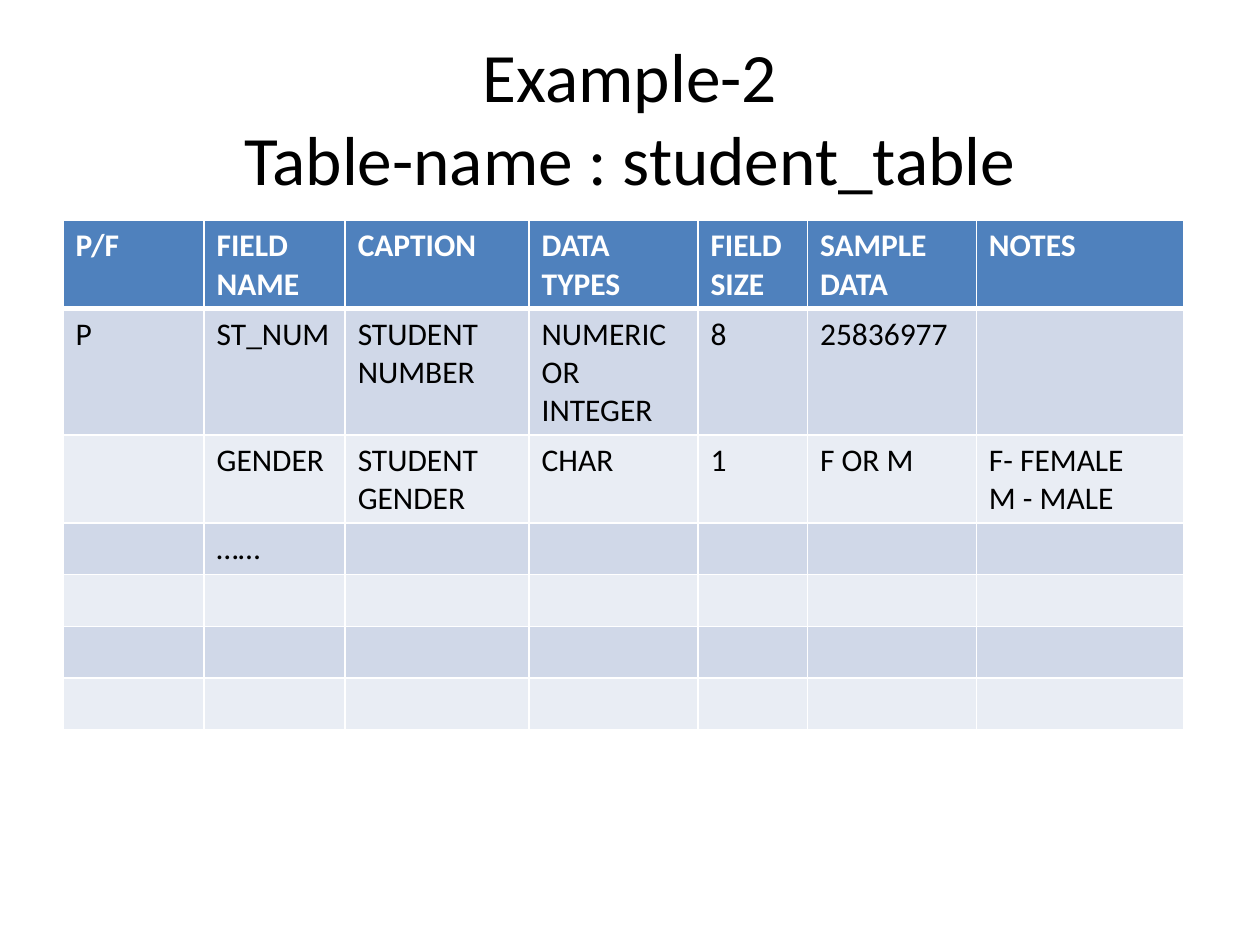
import pptx
import pptx.util
import pptx.dml.color
import pptx.enum.text
import pptx.oxml
import pptx.oxml.ns

WIDE, HIGH = 10, 7.5
HEAD = ["P/F", "FIELD NAME", "CAPTION", "DATA TYPES", "FIELD SIZE",
        "SAMPLE DATA", "NOTES"]
ROWS = [
    ["P", "ST_NUM", "STUDENT NUMBER", "NUMERIC OR INTEGER", "8", "25836977", ""],
    ["", "GENDER", "STUDENT GENDER", "CHAR", "1", "F OR M",
     "F- FEMALE\nM - MALE"],
    ["", "……", "", "", "", "", ""],
] + [[""] * len(HEAD)] * 3
COLS = [1.12, 1.12, 1.46, 1.34, 0.87, 1.34, 1.65]


def color(code):
    return pptx.dml.color.RGBColor.from_string(code)


class Deck:
    font = "Calibri"
    ink, paper = "000000", "FFFFFF"
    blue, bands = "4F81BD", ["D0D8E8", "E9EDF4"]
    row = 0.41

    def __init__(self):
        self.file = pptx.Presentation()
        self.file.slide_width = pptx.util.Inches(WIDE)
        self.file.slide_height = pptx.util.Inches(HIGH)
        self.slide = self.file.slides.add_slide(self.file.slide_layouts[6])

    def place(self, left, top, width, height):
        """Turn shares of the slide into lengths."""
        return [pptx.util.Inches(share * side) for share, side in
                zip((left, top, width, height), (WIDE, HIGH) * 2)]

    def style(self, para, size, ink, bold=False):
        para.font.name = self.font
        para.font.size = pptx.util.Pt(size)
        para.font.bold = bold
        para.font.color.rgb = color(ink)

    def title(self, text, *area):
        frame = self.slide.shapes.add_textbox(*self.place(*area)).text_frame
        frame.word_wrap = True
        frame.vertical_anchor = pptx.enum.text.MSO_ANCHOR.MIDDLE
        para = frame.paragraphs[0]
        para.text = text
        para.alignment = pptx.enum.text.PP_ALIGN.CENTER
        self.style(para, 39.6, self.ink)

    def edge(self, cell, side, width):
        cell._tc.get_or_add_tcPr().append(pptx.oxml.parse_xml(
            f'<a:ln{side} {pptx.oxml.ns.nsdecls("a")} w="{pptx.util.Pt(width)}">'
            f'<a:solidFill><a:srgbClr val="{self.paper}"/></a:solidFill>'
            f'</a:ln{side}>'))

    def cell(self, cell, text, fill, ink, head):
        cell.text = text
        for para in cell.text_frame.paragraphs:
            self.style(para, 18, ink, head)
        for side in "LRTB":
            self.edge(cell, side, 3 if head and side == "B" else 1)
        cell.fill.solid()
        cell.fill.fore_color.rgb = color(fill)

    def table(self, rows, cols, left, top):
        area = self.place(left, top, sum(cols) / WIDE,
                          len(rows) * self.row / HIGH)
        grid = self.slide.shapes.add_table(len(rows), len(cols), *area).table
        for col, width in zip(grid.columns, cols):
            col.width = pptx.util.Inches(width)
        for r, row in enumerate(rows):
            head = r == 0
            fill = self.blue if head else self.bands[(r - 1) % 2]
            ink = self.paper if head else self.ink
            for c, text in enumerate(row):
                self.cell(grid.cell(r, c), text, fill, ink, head)


def main():
    deck = Deck()
    deck.title("Example-2\nTable-name : student_table",
               0.05, 0.04, 0.9, 1.25 / HIGH)
    deck.table([HEAD] + ROWS, COLS, 0.05, 1.75 / HIGH)
    deck.file.save("out.pptx")


if __name__ == "__main__":
    main()
